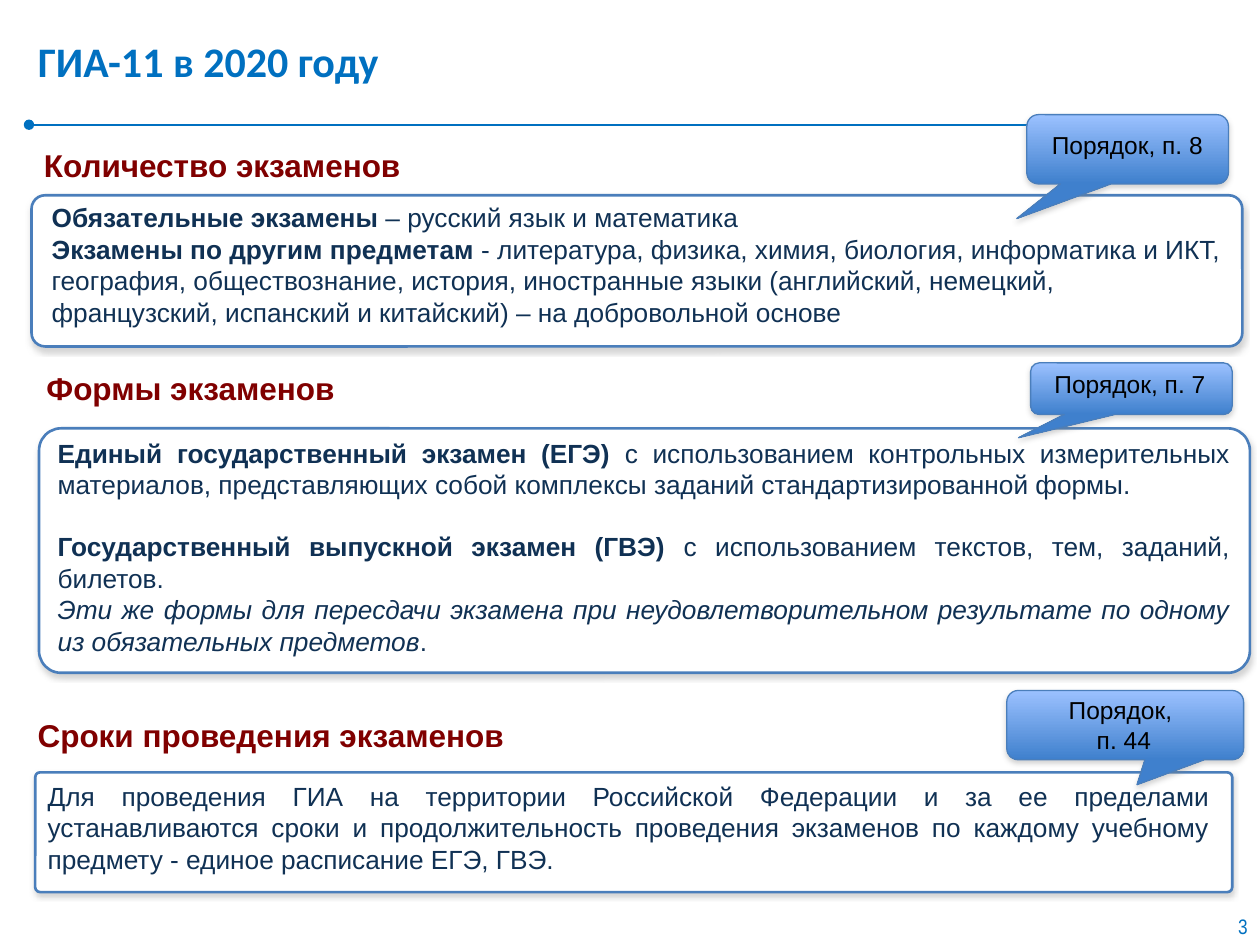
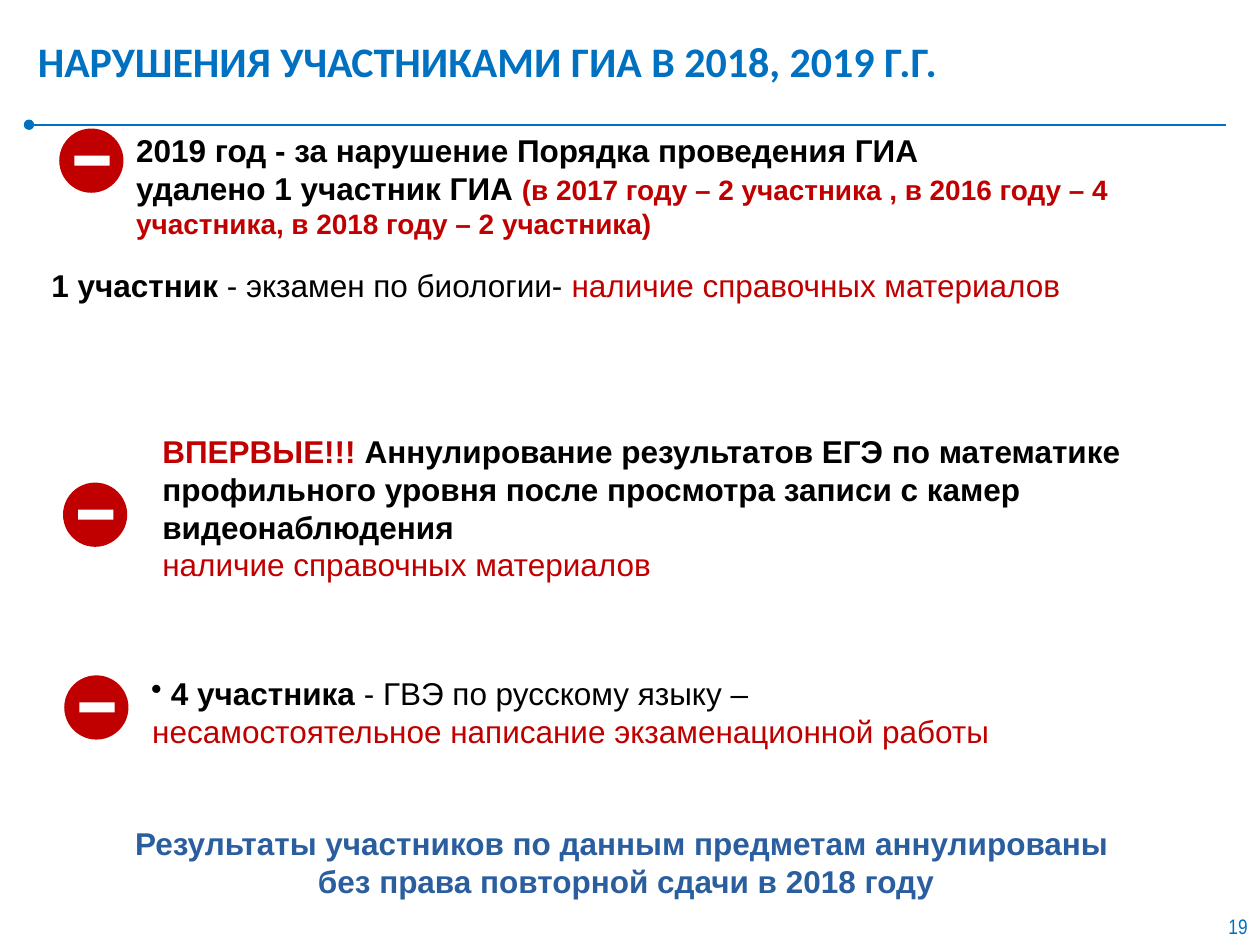
import pptx
import pptx.util
import pptx.dml.color
import pptx.enum.shapes
import pptx.enum.text
import lxml.etree

# ---- Shared look ----
HUES = {
    "blue": "0070C0", "navy": "103154", "maroon": "800000", "red": "C00000",
    "black": "000000", "white": "FFFFFF", "edge": "4A7EBB", "steel": "2A5E9E",
    "light": "9BC1FF", "deep": "3F80CD", "shade": "808080",
}
LOOKS = {  # run name: size, colour, bold, italic
    "title": (24, "blue", True, False),
    "page": (12, "blue", False, False),
    "head": (18, "maroon", True, False),
    "note": (14, "black", False, False),
    "plain": (15, "navy", False, False),
    "term": (15, "navy", True, False),
    "aside": (15, "navy", False, True),
    "fact": (18, "black", False, False),
    "strong": (18, "black", True, False),
    "cause": (18, "red", False, False),
    "alert": (18, "red", True, False),
    "past": (16, "red", True, False),
    "end": (18, "steel", True, False),
}
FONTS = {"title": "Calibri", "page": "Arial Narrow"}

# ---- Content: places are (column, row, columns, rows) on a 100 x 75 grid ----
EXAMS = {
    "title": "ГИА-11 в 2020 году",
    "page": "3",
    "parts": [
        {
            "head": "Количество экзаменов", "spot": (2.5, 11.1, 56.9, 4),
            "card": (2.5, 15.5, 96.1, 12), "round": 0.09,
            "box": (3.1, 15.5, 95, 11.1), "align": "LEFT",
            "text": [
                [("Обязательные экзамены ", "term"),
                 ("– русский язык и математика", "plain")],
                [("Экзамены по другим предметам ", "term"),
                 ("- литература, физика, химия, биология, информатика и ИКТ, "
                  "география, обществознание, история, иностранные языки "
                  "(английский, немецкий, французский, испанский и китайский) "
                  "– на добровольной основе", "plain")],
            ],
            "note": "Порядок, п. 8", "call": (81.5, 9.1, 16, 5.5),
            "tail": (-0.55, 1), "label": (82.5, 9.8, 14.5, 3.3), "side": "LEFT",
        },
        {
            "head": "Формы экзаменов", "spot": (2.7, 28.8, 56.9, 4),
            "card": (3.1, 34, 96.1, 19.4), "round": 0.09,
            "box": (3.6, 34.2, 95, 18.7), "align": "JUSTIFY", "gaps": {1: 17.25},
            "text": [
                [("Единый государственный экзамен (ЕГЭ) ", "term"),
                 ("с использованием контрольных измерительных материалов, "
                  "представляющих собой комплексы заданий стандартизированной "
                  "формы.", "plain")],
                [("Государственный выпускной экзамен (ГВЭ) ", "term"),
                 ("с использованием текстов, тем, заданий, билетов.", "plain")],
                [("Эти же формы для пересдачи экзамена при "
                  "неудовлетворительном результате по одному из обязательных "
                  "предметов", "aside"), (".", "plain")],
            ],
            "note": "Порядок, п. 7", "call": (81.8, 28.8, 16, 4.1),
            "tail": (-0.56, 0.95), "label": (82.7, 28.8, 14.5, 3.3), "side": "LEFT",
        },
        {
            "head": "Сроки проведения экзаменов", "spot": (2, 56.3, 85.2, 4),
            "card": (2.8, 61.3, 95, 9.5), "round": 0.04,
            "box": (2.8, 61.4, 94.2, 8.6), "align": "JUSTIFY",
            "text": [
                [("Для проведения ГИА на территории Российской Федерации и за "
                  "ее пределами устанавливаются сроки и продолжительность "
                  "проведения экзаменов по каждому учебному предмету - единое "
                  "расписание ЕГЭ, ГВЭ.", "plain")],
            ],
            "note": "Порядок, \nп. 44", "call": (79.9, 54.8, 18.8, 5.5),
            "tail": (0.05, 0.86), "label": (80.7, 54.7, 17, 5.7), "side": "CENTER",
        },
    ],
}
BREACH = {
    "title": "НАРУШЕНИЯ УЧАСТНИКАМИ ГИА В 2018, 2019 Г.Г.",
    "page": "19",
    "signs": [(4.7, 10.2), (5, 38.3), (5.1, 53.6)],
    "lead": ((9.8, 9.9, 88.1, 10.1), [
        [("2019 год - за нарушение Порядка проведения ГИА \n"
          "удалено 1 участник ГИА ", "strong"),
         ("(в 2017 году – 2 участника , в 2016 году – 4 участника, "
          "в 2018 году – 2 участника)", "past")]]),
    "cases": [
        ((3.1, 20.6, 94.1, 7.1), [
            [("1 участник", "strong"), (" - экзамен по биологии- ", "fact"),
             ("наличие справочных материалов", "cause")]], {}),
        ((11.9, 33.8, 88.1, 16.2), [
            [("ВПЕРВЫЕ!!! ", "alert"),
             ("Аннулирование результатов ЕГЭ по математике профильного уровня "
              "после просмотра записи с камер видеонаблюдения", "strong")],
            [("наличие справочных материалов", "cause")]], {}),
        ((11, 53, 83.9, 7.1), [
            [(" 4 участника", "strong"), (" - ГВЭ по русскому языку – \n", "fact"),
             ("несамостоятельное написание экзаменационной работы", "cause")]],
         {"mark": "•"}),
        ((7.2, 64.9, 85, 7.1), [
            [("Результаты участников по данным предметам аннулированы \n"
              "без права повторной сдачи в 2018 году", "end")]],
         {"align": "CENTER"}),
    ],
}

# ---- Helpers ----
deck = pptx.Presentation()
deck.slide_width = pptx.util.Inches(10)
deck.slide_height = pptx.util.Inches(7.5)
UNIT = deck.slide_width // 100
KINDS = pptx.enum.shapes.MSO_SHAPE


def grid(*cells):
    return [round(cell * UNIT) for cell in cells]


def tint(name):
    return pptx.dml.color.RGBColor.from_string(HUES[name])


def node(home, tag, **attrs):
    return lxml.etree.SubElement(home, pptx.oxml.ns.qn(tag), attrs)


def place(shape, spot):
    shape.left, shape.top, shape.width, shape.height = grid(*spot)


def write(shape, paras, align="LEFT", anchor="TOP", mark=None, gaps=None):
    frame = shape.text_frame
    frame.word_wrap = True
    frame.auto_size = pptx.enum.text.MSO_AUTO_SIZE.NONE
    frame.vertical_anchor = getattr(pptx.enum.text.MSO_ANCHOR, anchor)
    for i, runs in enumerate(paras):
        para = frame.add_paragraph() if i else frame.paragraphs[0]
        para.alignment = getattr(pptx.enum.text.PP_ALIGN, align)
        para.space_before = pptx.util.Pt((gaps or {}).get(i, 0))
        props = para._p.get_or_add_pPr()
        hang = pptx.util.Inches(0.01) if mark else 0
        props.set("marL", str(hang))
        props.set("indent", str(-hang))
        if mark:
            node(props, "a:buChar", char=mark)
        else:
            node(props, "a:buNone")
        for text, look in runs:
            for j, line in enumerate(text.split("\n")):
                if j:
                    para.add_line_break()
                if line:
                    run = para.add_run()
                    run.text = line
                    size, hue, bold, slant = LOOKS[look]
                    run.font.name = FONTS.get(look, "Arial")
                    run.font.size = pptx.util.Pt(size)
                    run.font.bold, run.font.italic = bold, slant
                    run.font.color.rgb = tint(hue)


def label(slide, spot, paras, **style):
    write(slide.shapes.add_textbox(*grid(*spot)), paras, **style)


def draw(home, kind, spot, fill=None, line=0):
    shape = home.shapes.add_shape(kind, *grid(*spot))
    shape.shadow.inherit = False
    if fill:
        shape.fill.solid()
        shape.fill.fore_color.rgb = tint(fill)
    if line:
        shape.line.color.rgb = tint("edge")
        shape.line.width = pptx.util.Pt(line)
    else:
        shape.line.fill.background()
    return shape


def shade(shape):
    glow = shape.element.spPr.find(pptx.oxml.ns.qn("a:effectLst"))
    cast = node(glow, "a:outerShdw", blurRad=str(pptx.util.Pt(3.1)),
                dist=str(pptx.util.Pt(1.8)), dir="5400000", rotWithShape="0")
    hue = node(cast, "a:srgbClr", val=HUES["shade"])
    node(hue, "a:alpha", val="35000")


def start(data):
    """Slide with title, rule and page number; gives the body too."""
    slide = deck.slides.add_slide(deck.slide_layouts[1])
    title, body = slide.placeholders
    place(title, (2, 1.3, 90, 7.1))
    write(title, [[(data["title"], "title")]], anchor="MIDDLE")
    rule = slide.shapes.add_connector(
        pptx.enum.shapes.MSO_CONNECTOR.STRAIGHT, *grid(2.3, 9.9, 97.3, 9.9))
    rule.line.color.rgb = tint("blue")
    rule.line.width = pptx.util.Pt(1.25)
    node(rule.line._get_or_add_ln(), "a:headEnd", type="oval")
    node(rule.element.spPr, "a:effectLst")
    label(slide, (94.9, 72, 5.1, 3), [[(data["page"], "page")]], align="RIGHT")
    return slide, body


def callout(slide, part):
    shape = draw(slide, KINDS.ROUNDED_RECTANGULAR_CALLOUT, part["call"], line=0.75)
    shape.adjustments[0], shape.adjustments[1] = part["tail"]
    shape.fill.gradient()
    shape.fill.gradient_angle = 270
    for stop, hue in zip(shape.fill.gradient_stops, ("light", "deep")):
        stop.color.rgb = tint(hue)
    shade(shape)
    label(slide, part["label"], [[(part["note"], "note")]], align=part["side"])


def sign(slide, col, row):
    group = slide.shapes.add_group_shape()
    draw(group, KINDS.OVAL, (col, row, 5.1, 5.1), "red")
    draw(group, KINDS.RECTANGLE, (col + 1.2, row + 2.15, 2.8, 0.8), "white")


# ---- Slide: exams ----
slide, body = start(EXAMS)
for i, part in enumerate(EXAMS["parts"]):
    card = draw(slide, KINDS.ROUNDED_RECTANGLE, part["card"], "white", 1.5)
    card.adjustments[0] = part["round"]
    shade(card)
    style = {"align": part["align"], "gaps": part.get("gaps")}
    if i:
        label(slide, part["box"], part["text"], **style)
    else:
        slide.shapes.element.append(body.element)  # bring above its card
        place(body, part["box"])
        write(body, part["text"], **style)
    label(slide, part["spot"], [[(part["head"], "head")]])
    callout(slide, part)

# ---- Slide: breaches ----
slide, body = start(BREACH)
spot, paras = BREACH["lead"]
place(body, spot)
write(body, paras)
for spot, paras, style in BREACH["cases"]:
    label(slide, spot, paras, **style)
for col, row in BREACH["signs"]:
    sign(slide, col, row)

deck.save("out.pptx")
